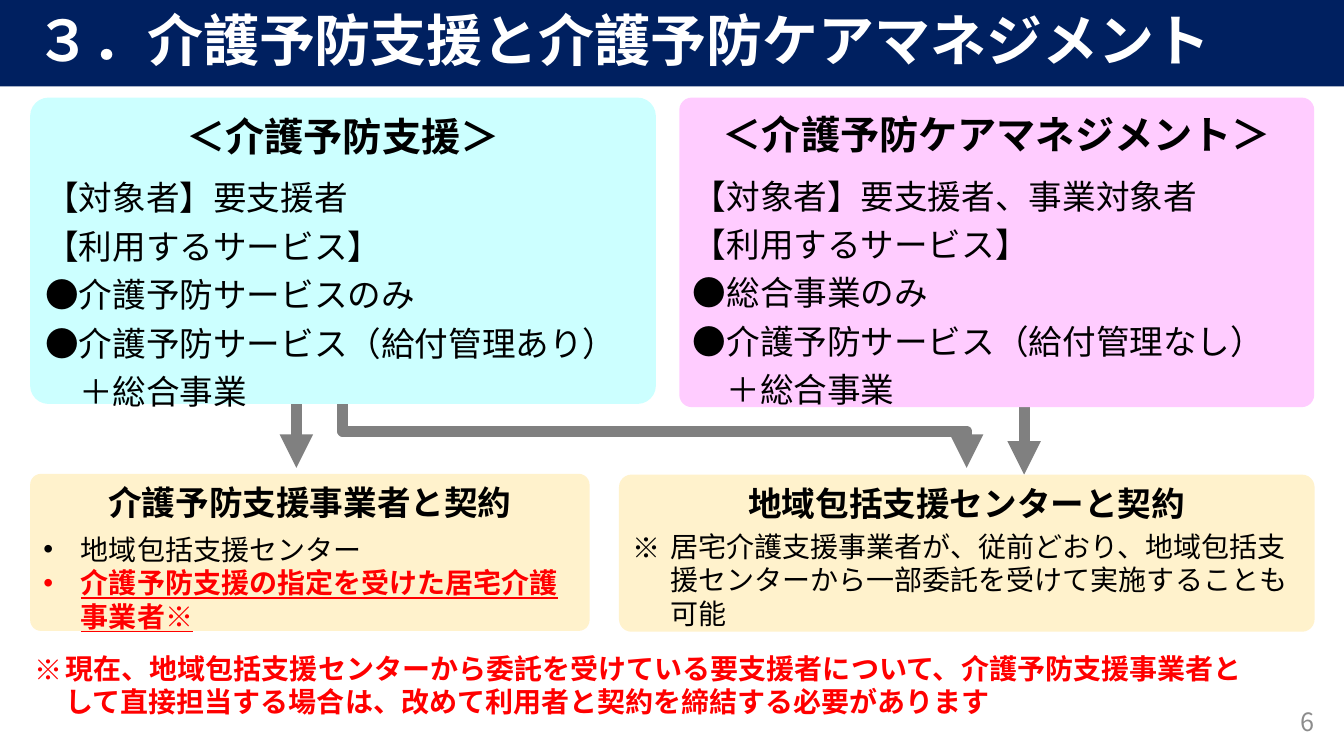
from pptx import Presentation
from pptx.dml.color import RGBColor
from pptx.enum import shapes, text
from pptx.oxml import ns
from pptx.util import Cm, Pt
from lxml import etree

FONT = "Noto Sans CJK JP"
NAVY = RGBColor(0x00, 0x20, 0x60)
CYAN = RGBColor(0xCC, 0xFF, 0xFF)
PINK = RGBColor(0xFF, 0xCC, 0xFF)
CREAM = RGBColor(0xFF, 0xF2, 0xCC)
GREY = RGBColor(0x80, 0x80, 0x80)
PALE_GREY = RGBColor(0x8C, 0x8C, 0x8C)
BLACK = RGBColor(0x00, 0x00, 0x00)
WHITE = RGBColor(0xFF, 0xFF, 0xFF)
RED = RGBColor(0xFF, 0x00, 0x00)
LEFT, CENTER, RIGHT, JUSTIFY = (
    text.PP_ALIGN.LEFT, text.PP_ALIGN.CENTER, text.PP_ALIGN.RIGHT, text.PP_ALIGN.JUSTIFY)


def add_paragraph(box, words, size, color=BLACK, bold=False, underline=False,
                  align=LEFT, spacing=1.0, after=0):
    """Fill the first empty paragraph of the box, or append a new one."""
    frame = box.text_frame
    para = frame.paragraphs[0]
    if para.runs:
        para = frame.add_paragraph()
    para.alignment = align
    para.line_spacing = spacing
    para.space_before = Pt(0)
    para.space_after = Pt(after)
    span = para.add_run()
    span.text = words
    font = span.font
    font.name, font.size, font.bold = FONT, Pt(size), bold
    font.color.rgb = color
    if underline:
        font.underline = True
    east_asian = etree.Element(ns.qn("a:ea"), typeface=FONT)
    span._r.rPr.find(ns.qn("a:latin")).addnext(east_asian)
    return para


def indent(para, margin, bullet=None):
    """Indent the paragraph, hanging it behind a bullet if one is given."""
    properties = para._p.get_or_add_pPr()
    properties.set("marL", str(margin))
    if bullet:
        properties.set("indent", str(-margin))
        etree.SubElement(properties, ns.qn("a:buFont"),
                         typeface="Arial" if bullet == "•" else FONT)
        etree.SubElement(properties, ns.qn("a:buChar"), char=bullet)


def add_rounded_box(page, left, top, width, height, fill, corner):
    box = page.shapes.add_shape(shapes.MSO_SHAPE.ROUNDED_RECTANGLE,
                                Cm(left), Cm(top), Cm(width), Cm(height))
    box.adjustments[0] = corner
    box.shadow.inherit = False
    box.fill.solid()
    box.fill.fore_color.rgb = fill
    box.line.fill.background()
    box.text_frame.vertical_anchor = text.MSO_ANCHOR.TOP
    return box


def add_service_panel(page, place, fill, corner, heading, lines, last_line):
    panel = add_rounded_box(page, *place, fill, corner)
    panel.text_frame.margin_top = panel.text_frame.margin_bottom = 0
    add_paragraph(panel, heading, 28, bold=True, align=CENTER, spacing=1.2, after=7)
    for line in lines:
        add_paragraph(panel, line, 24, spacing=1.2)
    indent(add_paragraph(panel, last_line, 24, spacing=1.2), Pt(24))


def add_contract_box(page, place, corner, heading, gap):
    box = add_rounded_box(page, *place, CREAM, corner)
    add_paragraph(box, heading, 24, bold=True, align=CENTER, after=gap)
    return box


def add_text_box(page, left, top, width, height):
    box = page.shapes.add_textbox(Cm(left), Cm(top), Cm(width), Cm(height))
    box.text_frame.word_wrap = True
    return box


def add_arrow(page, kind, start_x, start_y, end_x, end_y):
    arrow = page.shapes.add_connector(kind, Cm(start_x), Cm(start_y), Cm(end_x), Cm(end_y))
    arrow.line.color.rgb = GREY
    arrow.line.width = Pt(8)
    etree.SubElement(arrow.line._get_or_add_ln(), ns.qn("a:tailEnd"), type="triangle")
    etree.SubElement(arrow._element.spPr, ns.qn("a:effectLst"))
    return arrow


def add_stepped_arrow(page, start_x, start_y, end_x, end_y, bend):
    """Draw an elbow that goes down, right and down: a mirrored one turned by 270 degrees."""
    center_x, center_y = (start_x + end_x) / 2, (start_y + end_y) / 2
    half_width, half_height = (end_y - start_y) / 2, (end_x - start_x) / 2
    arrow = add_arrow(page, shapes.MSO_CONNECTOR.ELBOW,
                      center_x + half_width, center_y - half_height,
                      center_x - half_width, center_y + half_height)
    properties = arrow._element.spPr
    properties.find(ns.qn("a:xfrm")).set("rot", str(270 * 60000))
    guides = properties.find(ns.qn("a:prstGeom")).find(ns.qn("a:avLst"))
    etree.SubElement(guides, ns.qn("a:gd"), name="adj1", fmla=f"val {round(bend * 100000)}")


def format_title(page, words):
    title = page.shapes.title
    title.left, title.top, title.width, title.height = Cm(0), Cm(0), Cm(33.87), Cm(2.18)
    title.fill.solid()
    title.fill.fore_color.rgb = NAVY
    frame = title.text_frame
    frame.auto_size = text.MSO_AUTO_SIZE.NONE
    frame.vertical_anchor = text.MSO_ANCHOR.MIDDLE
    frame.margin_left = Cm(0.89)
    add_paragraph(title, words, 40, WHITE, bold=True, spacing=0.9)


def main():
    deck = Presentation()
    deck.slide_width, deck.slide_height = Cm(33.87), Cm(19.05)
    page = deck.slides.add_slide(deck.slide_layouts[5])
    format_title(page, "３．介護予防支援と介護予防ケアマネジメント")

    straight = shapes.MSO_CONNECTOR.STRAIGHT
    add_arrow(page, straight, 7.47, 9.45, 7.47, 11.79)
    add_arrow(page, straight, 25.81, 9.63, 25.81, 11.96)
    add_stepped_arrow(page, 8.64, 10.01, 24.36, 11.79, 0.48)

    add_service_panel(
        page, (0.76, 2.46, 15.77, 7.72), CYAN, 0.06, "＜介護予防支援＞",
        ["【対象者】要支援者", "【利用するサービス】", "●介護予防サービスのみ",
         "●介護予防サービス（給付管理あり）"], "＋総合事業")
    add_service_panel(
        page, (17.12, 2.46, 16, 7.8), PINK, 0.04, "＜介護予防ケアマネジメント＞",
        ["【対象者】要支援者、事業対象者", "【利用するサービス】", "●総合事業のみ",
         "●介護予防サービス（給付管理なし）"], "＋総合事業")

    provider = add_contract_box(page, (0.76, 11.94, 14.1, 3.96), 0.07,
                                "介護予防支援事業者と契約", 7)
    indent(add_paragraph(provider, "地域包括支援センター", 20), Cm(0.95), "•")
    indent(add_paragraph(provider, "介護予防支援の指定を受けた居宅介護事業者※", 20, RED,
                         bold=True, underline=True), Cm(0.95), "•")

    center = add_contract_box(page, (15.6, 11.96, 17.53, 3.96), 0.08,
                              "地域包括支援センターと契約", 4)
    indent(add_paragraph(
        center, "居宅介護支援事業者が、従前どおり、地域包括支援センターから"
        "一部委託を受けて実施することも可能", 20), Cm(0.95), "※")

    footnote = add_text_box(page, 0.61, 16.28, 30.94, 1.96)
    indent(add_paragraph(
        footnote, "現在、地域包括支援センターから委託を受けている要支援者について、"
        "介護予防支援事業者として直接担当する場合は、改めて利用者と契約を締結する必要があります",
        20, RED, bold=True, align=JUSTIFY), Cm(0.79), "※")

    number = add_text_box(page, 31.29, 17.65, 2.08, 1.04)
    number.text_frame.vertical_anchor = text.MSO_ANCHOR.MIDDLE
    add_paragraph(number, "6", 18, PALE_GREY, align=RIGHT)

    deck.save("out.pptx")


if __name__ == "__main__":
    main()
